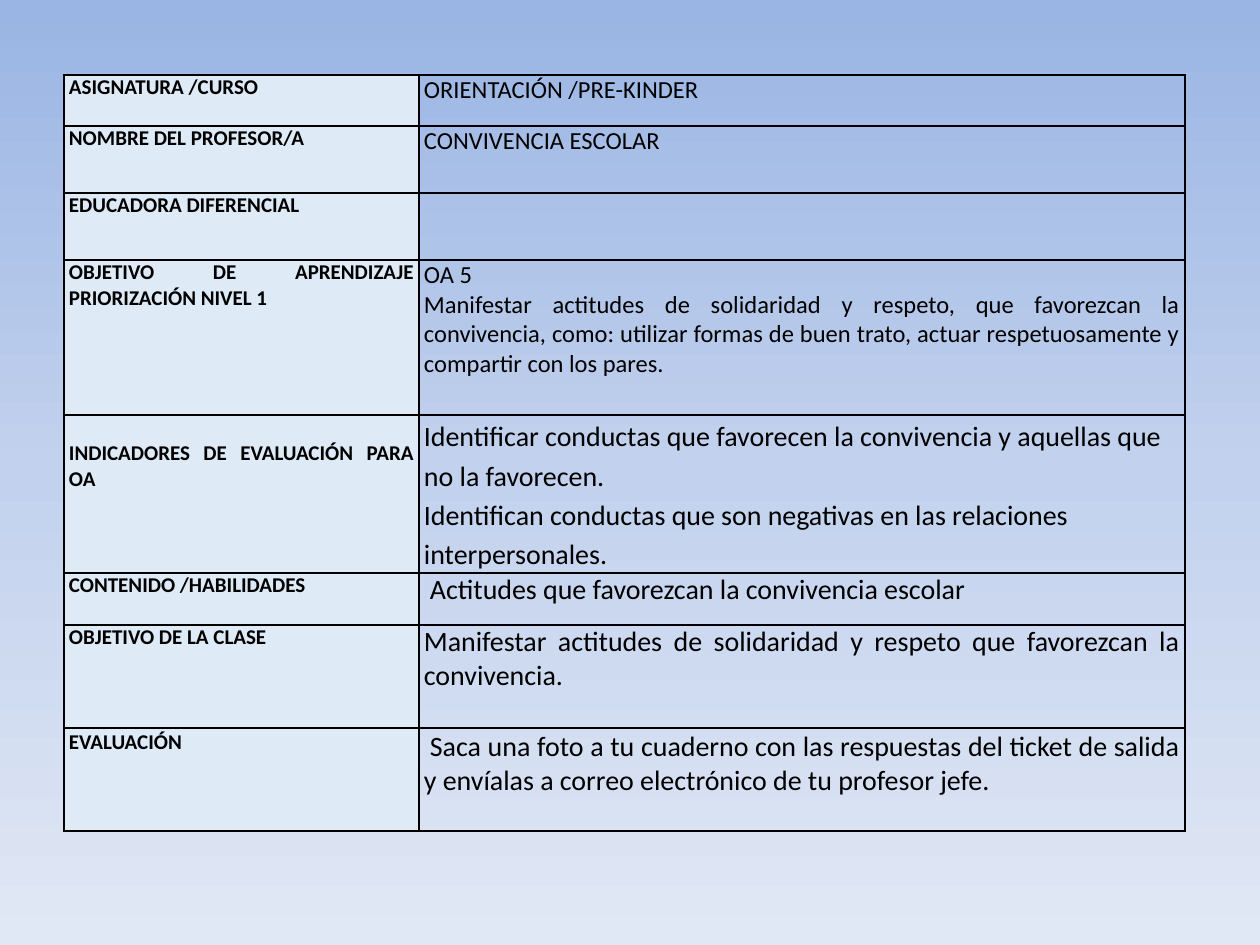
from lxml.etree import SubElement
from pptx import Presentation
from pptx.dml.color import RGBColor
from pptx.enum.text import MSO_ANCHOR, PP_ALIGN
from pptx.oxml.ns import qn
from pptx.util import Pt

PX = 914400 // 126
BLACK = RGBColor(0x00, 0x00, 0x00)
LABEL_FILL = RGBColor(0xDE, 0xEA, 0xF6)
BACKGROUND_STOPS = [
    (0, RGBColor(0x9A, 0xB5, 0xE4)),
    (50, RGBColor(0xC2, 0xD1, 0xED)),
    (100, RGBColor(0xE1, 0xE8, 0xF5)),
]

LEFT, TOP = 64, 75
COLUMN_WIDTHS = [355, 766]
SIDE_MARGIN = 5
LABEL_FORMAT = {"size": 12, "bold": True}

LESSON_PLAN = [
    (51, "ASIGNATURA /CURSO", ["ORIENTACIÓN /PRE-KINDER"], {"size": 14}),
    (67, "NOMBRE DEL PROFESOR/A", ["CONVIVENCIA ESCOLAR"], {"size": 14}),
    (67, "EDUCADORA DIFERENCIAL", [], {}),
    (155, "OBJETIVO DE APRENDIZAJE PRIORIZACIÓN NIVEL 1", [
        "OA 5",
        "Manifestar actitudes de solidaridad y respeto, que favorezcan la convivencia, "
        "como: utilizar formas de buen trato, actuar respetuosamente y compartir con los pares.",
    ], {"size": 14}),
    (158, "INDICADORES DE EVALUACIÓN PARA OA", [
        "Identificar conductas que favorecen la convivencia y aquellas que no la favorecen.",
        "Identifican conductas que son negativas en las relaciones interpersonales.",
    ], {"size": 16, "align": PP_ALIGN.LEFT, "line_spacing": 1.15}),
    (52, "CONTENIDO /HABILIDADES",
     ["Actitudes que favorezcan la convivencia escolar"], {"size": 16, "indent": 6}),
    (103, "OBJETIVO DE LA CLASE",
     ["Manifestar actitudes de solidaridad y respeto que favorezcan la convivencia."],
     {"size": 16}),
    (103, "EVALUACIÓN", [
        "Saca una foto a tu cuaderno con las respuestas del ticket de salida "
        "y envíalas a correo electrónico de tu profesor jefe.",
    ], {"size": 16, "indent": 6}),
]
LABEL_TOP_MARGINS = {"INDICADORES DE EVALUACIÓN PARA OA": 26, "EVALUACIÓN": 2}
ANSWER_TOP_MARGINS = {"EVALUACIÓN": 2}


def write_text(cell, texts, size=14, bold=False, align=PP_ALIGN.JUSTIFY,
               line_spacing=None, indent=0):
    frame = cell.text_frame
    for index, text in enumerate(texts):
        paragraph = frame.add_paragraph() if index else frame.paragraphs[0]
        paragraph.alignment = align
        if line_spacing:
            paragraph.line_spacing = line_spacing
        if indent:
            properties = paragraph._p.get_or_add_pPr()
            properties.set("marL", "0")
            properties.set("indent", str(indent * PX))
        run = paragraph.add_run()
        run.text = text
        run.font.name = "Calibri"
        run.font.size = Pt(size)
        run.font.bold = bold
        run.font.color.rgb = BLACK


def add_solid_border(cell):
    properties = cell._tc.get_or_add_tcPr()
    for side in ("a:lnL", "a:lnR", "a:lnT", "a:lnB"):
        line = SubElement(properties, qn(side), w=str(Pt(1)))
        fill = SubElement(line, qn("a:solidFill"))
        SubElement(fill, qn("a:srgbClr"), val=str(BLACK))


def format_cell(cell, top_margin, fill_color=None):
    cell.margin_left = cell.margin_right = SIDE_MARGIN * PX
    cell.margin_top, cell.margin_bottom = top_margin * PX, 0
    cell.vertical_anchor = MSO_ANCHOR.TOP
    add_solid_border(cell)
    if fill_color is None:
        cell.fill.background()
    else:
        cell.fill.solid()
        cell.fill.fore_color.rgb = fill_color


def paint_background(slide):
    fill = slide.background.fill
    fill.gradient()
    fill.gradient_angle = 270
    stops = slide._element.find(".//" + qn("a:gsLst"))
    for stop in list(stops):
        stops.remove(stop)
    for percent, color in BACKGROUND_STOPS:
        stop = SubElement(stops, qn("a:gs"), pos=str(percent * 1000))
        SubElement(stop, qn("a:srgbClr"), val=str(color))


def add_lesson_plan(slide):
    height = sum(row[0] for row in LESSON_PLAN)
    plan = slide.shapes.add_table(
        len(LESSON_PLAN), len(COLUMN_WIDTHS), LEFT * PX, TOP * PX,
        sum(COLUMN_WIDTHS) * PX, height * PX).table
    plan.first_row = plan.horz_banding = False
    for column, width in zip(plan.columns, COLUMN_WIDTHS):
        column.width = width * PX
    for row, (row_height, label, answers, answer_format) in zip(plan.rows, LESSON_PLAN):
        row.height = row_height * PX
        label_cell, answer_cell = row.cells
        format_cell(label_cell, LABEL_TOP_MARGINS.get(label, 0), LABEL_FILL)
        write_text(label_cell, [label], **LABEL_FORMAT)
        format_cell(answer_cell, ANSWER_TOP_MARGINS.get(label, 0))
        write_text(answer_cell, answers, **answer_format)


def main():
    deck = Presentation()
    deck.slide_width, deck.slide_height = 1260 * PX, 945 * PX
    slide = deck.slides.add_slide(deck.slide_layouts[6])
    paint_background(slide)
    add_lesson_plan(slide)
    deck.save("out.pptx")


if __name__ == "__main__":
    main()
